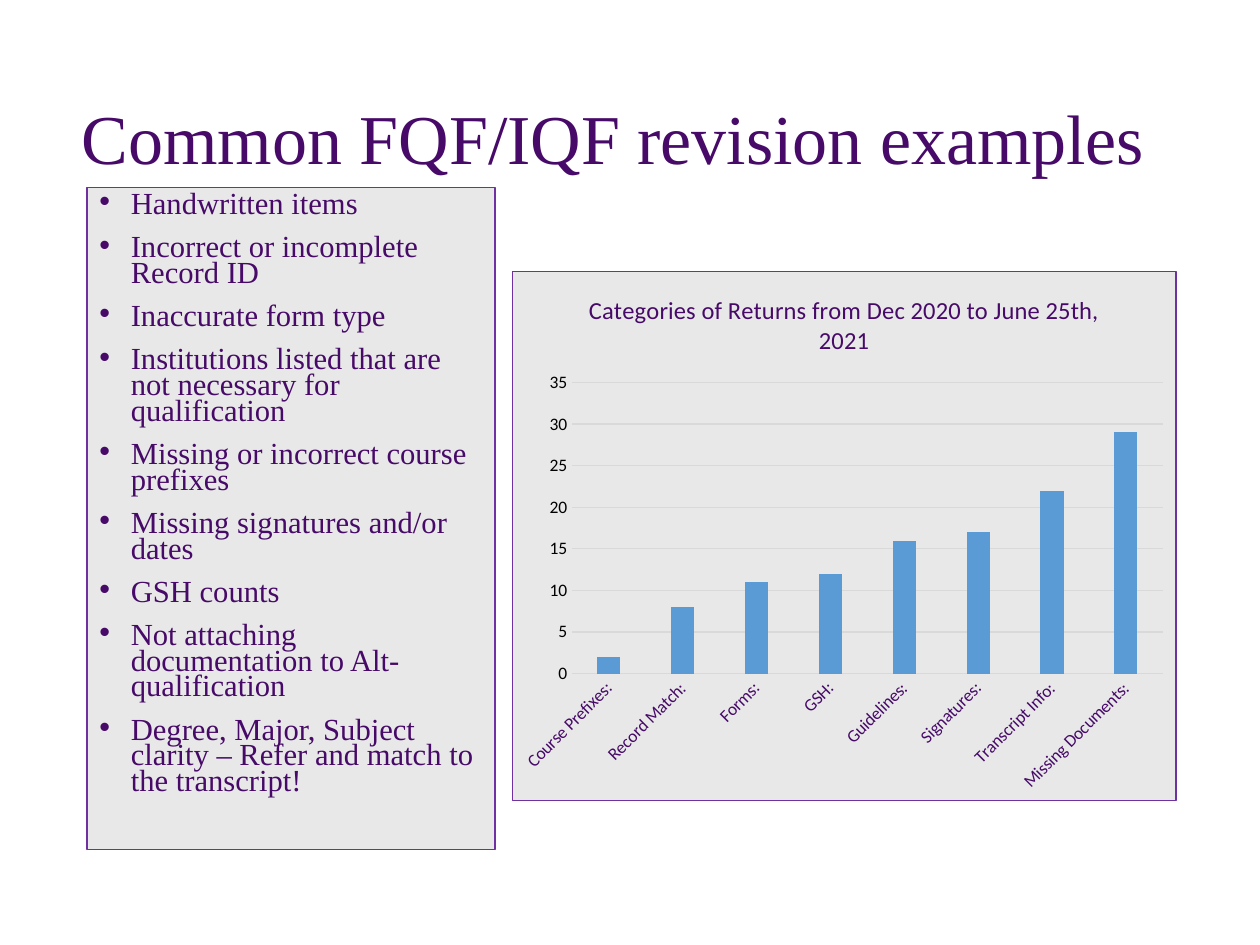
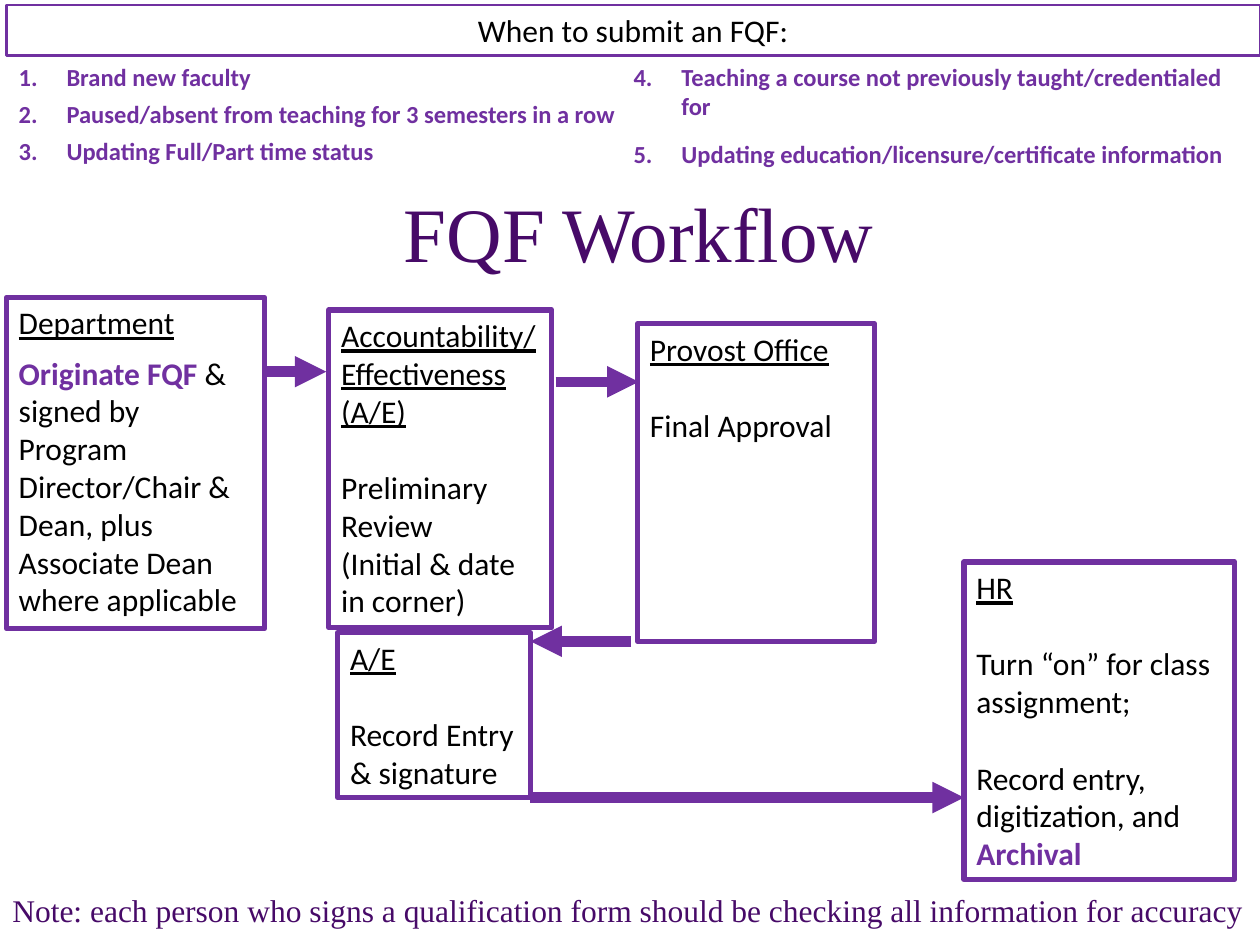
from typing import NamedTuple

from lxml import etree
from pptx import Presentation
from pptx import util as u
from pptx.chart.data import CategoryChartData
from pptx.dml.color import RGBColor
from pptx.enum import chart as charts
from pptx.enum import shapes, text
from pptx.oxml import parse_xml
from pptx.oxml.ns import nsdecls, qn

PLUM, PURPLE, BLACK = "470A68", "7030A0", "000000"
PANEL, GRID, BAR = "E8E8E8", "D9D9D9", "5B9BD5"
SERIF, SANS = "Times New Roman", "Calibri"
LEFT, CENTER = text.PP_ALIGN.LEFT, text.PP_ALIGN.CENTER
TITLE_HEIGHT = 1.45
BLANK_LINE = 22


class Area(NamedTuple):
    left: float
    top: float
    width: float
    height: float

    def lengths(self) -> list[u.Length]:
        return [u.Inches(value) for value in self]


class Style(NamedTuple):
    size: float
    color: str = BLACK
    face: str = SANS
    bold: bool = False
    underline: bool = False


class Line(NamedTuple):
    """One paragraph: its (words, style) spans and the points before it."""
    spans: list[tuple[str, Style]]
    before: float = 0


class Step(NamedTuple):
    area: Area
    heading: str
    lines: list[Line]


class Arrow(NamedTuple):
    start: float
    end: float
    y: float


PLAIN = Style(18)
HEADING = Style(18, underline=True)
STRONG = Style(18, PURPLE, bold=True)
REASON = Style(14, PURPLE, bold=True)
REVISION = Style(17.5, PLUM, SERIF)
NOTE = Style(18, PLUM, SERIF)

REVISIONS = [
    "Handwritten items",
    "Incorrect or incomplete Record ID",
    "Inaccurate form type",
    "Institutions listed that are not necessary for qualification",
    "Missing or incorrect course prefixes",
    "Missing signatures and/or dates",
    "GSH counts",
    "Not attaching documentation to Alt-qualification",
    "Degree, Major, Subject clarity – Refer and match to the transcript!",
]
RETURNS = {
    "Course Prefixes:": 2, "Record Match:": 8, "Forms:": 11, "GSH:": 12,
    "Guidelines:": 16, "Signatures:": 17, "Transcript Info:": 22,
    "Missing Documents:": 29,
}
STEPS = [
    Step(Area(0.05, 2.36, 2.05, 2.63), "Department", [
        Line([("Originate FQF ", STRONG),
              ("& signed by Program Director/Chair & Dean, plus "
               "Associate Dean where applicable", PLAIN)], 7)]),
    Step(Area(2.61, 2.46, 1.77, 2.52), "Accountability/Effectiveness (A/E)", [
        Line([("Preliminary Review", PLAIN)], BLANK_LINE),
        Line([("(Initial & date in corner)", PLAIN)])]),
    Step(Area(5.06, 2.57, 1.88, 2.52), "Provost Office", [
        Line([("Final Approval", PLAIN)], BLANK_LINE)]),
    Step(Area(7.65, 4.46, 2.15, 2.52), "HR", [
        Line([("Turn “on” for class assignment;", PLAIN)], BLANK_LINE),
        Line([("Record entry, digitization, and ", PLAIN),
              ("Archival", STRONG)], BLANK_LINE)]),
    Step(Area(2.68, 5.02, 1.53, 1.31), "A/E", [
        Line([("Record Entry & signature", PLAIN)], BLANK_LINE)]),
]
ARROWS = [Arrow(2.1, 2.59, 2.95), Arrow(4.41, 5.07, 3.03),
          Arrow(5.01, 4.21, 5.09), Arrow(4.21, 7.65, 6.33)]
REASONS = [
    ["Brand new faculty",
     "Paused/absent from teaching for 3 semesters in a row",
     "Updating Full/Part time status"],
    ["Teaching a course not previously taught/credentialed for",
     "Updating education/licensure/certificate information"],
]
REASON_GAPS = [4.5, 10.5]


def rgb(value: str) -> RGBColor:
    return RGBColor.from_string(value)


def style_font(font, style: Style) -> None:
    font.size = u.Pt(style.size)
    font.name = style.face
    font.bold = style.bold
    font.underline = style.underline
    font.color.rgb = rgb(style.color)


def write(frame, lines: list[Line], align=LEFT, spacing: float = 1.0) -> None:
    frame.word_wrap = True
    for index, line in enumerate(lines):
        para = frame.add_paragraph() if index else frame.paragraphs[0]
        para.alignment = align
        para.line_spacing = spacing
        para.space_before = u.Pt(line.before)
        for words, style in line.spans:
            span = para.add_run()
            span.text = words
            style_font(span.font, style)


def list_lines(items: list[str], style: Style, gap: float) -> list[Line]:
    return [Line([(item, style)], gap if index else 0)
            for index, item in enumerate(items)]


def add_marks(frame, indent: float, tag: str, **settings: str) -> None:
    """Give every paragraph a hanging bullet or number."""
    for para in frame.paragraphs:
        properties = para._p.get_or_add_pPr()
        properties.set("marL", str(u.Inches(indent)))
        properties.set("indent", str(-u.Inches(indent)))
        if tag == "a:buChar":
            etree.SubElement(properties, qn("a:buFont"), typeface="Arial")
        etree.SubElement(properties, qn(tag), **settings)


def add_title(page, words: str, area: Area, size: float, align=LEFT) -> None:
    title = page.shapes.title
    title.left, title.top, title.width, title.height = area.lengths()
    title.text_frame.vertical_anchor = text.MSO_ANCHOR.MIDDLE
    title.text_frame.auto_size = text.MSO_AUTO_SIZE.NONE
    write(title.text_frame, [Line([(words, Style(size, PLUM, SERIF))])], align, 0.9)


def add_box(page, area: Area, line_width: float, fill: str = ""):
    box = page.shapes.add_shape(shapes.MSO_SHAPE.RECTANGLE, *area.lengths())
    box.shadow.inherit = False
    if fill:
        box.fill.solid()
        box.fill.fore_color.rgb = rgb(fill)
    else:
        box.fill.background()
    box.line.color.rgb = rgb(PURPLE)
    box.line.width = u.Pt(line_width)
    box.text_frame.vertical_anchor = text.MSO_ANCHOR.TOP
    return box


def add_arrow(page, arrow: Arrow) -> None:
    connector = page.shapes.add_connector(
        shapes.MSO_CONNECTOR.STRAIGHT, u.Inches(arrow.start), u.Inches(arrow.y),
        u.Inches(arrow.end), u.Inches(arrow.y))
    connector.line.color.rgb = rgb(PURPLE)
    connector.line.width = u.Pt(6)
    etree.SubElement(connector.line._get_or_add_ln(), qn("a:tailEnd"), type="triangle")
    etree.SubElement(connector._element.spPr, qn("a:effectLst"))


def frame_chart(chart) -> None:
    """Fill and outline the chart area, and fix the inner plot area."""
    chart.element.find(qn("c:chart")).addnext(parse_xml(
        f'<c:spPr {nsdecls("c", "a")}>'
        f'<a:solidFill><a:srgbClr val="{PANEL}"/></a:solidFill>'
        f'<a:ln w="{u.Pt(0.75)}"><a:solidFill><a:srgbClr val="{PURPLE}"/>'
        '</a:solidFill></a:ln></c:spPr>'))
    plot_area = chart.element.find(".//" + qn("c:plotArea"))
    for old in plot_area.findall(qn("c:layout")):
        plot_area.remove(old)
    settings = {"layoutTarget": "inner", "xMode": "edge", "yMode": "edge",
                "x": 0.09, "y": 0.21, "w": 0.89, "h": 0.55}
    layout = etree.Element(qn("c:layout"))
    manual = etree.SubElement(layout, qn("c:manualLayout"))
    for name, value in settings.items():
        etree.SubElement(manual, qn("c:" + name), val=str(value))
    plot_area.insert(0, layout)


def add_returns_chart(page, area: Area) -> None:
    data = CategoryChartData()
    data.categories = list(RETURNS)
    data.add_series("Series 1", list(RETURNS.values()))
    chart = page.shapes.add_chart(
        charts.XL_CHART_TYPE.COLUMN_CLUSTERED, *area.lengths(), data).chart
    frame_chart(chart)
    style_font(chart.font, Style(10))
    chart.has_legend = False
    chart.has_title = True
    write(chart.chart_title.text_frame, [Line([(
        "Categories of Returns from Dec 2020 to June 25th, 2021",
        Style(14, PLUM))])], CENTER)

    plot = chart.plots[0]
    plot.vary_by_categories = False
    plot.gap_width, plot.overlap = 219, -27
    bars = plot.series[0].format.fill
    bars.solid()
    bars.fore_color.rgb = rgb(BAR)

    categories, values = chart.category_axis, chart.value_axis
    for axis, color in ((categories, PLUM), (values, BLACK)):
        axis.major_tick_mark = axis.minor_tick_mark = charts.XL_TICK_MARK.NONE
        style_font(axis.tick_labels.font, Style(10, color))
    labels = categories.format.line
    values.format.line.fill.background()
    values.minimum_scale, values.maximum_scale, values.major_unit = 0, 35, 5
    for line in (labels, values.major_gridlines.format.line):
        line.color.rgb = rgb(GRID)
        line.width = u.Pt(0.75)
    body = categories._element.find(qn("c:txPr")).find(qn("a:bodyPr"))
    body.set("rot", str(-45 * 60000))
    body.set("vert", "horz")


def build_revisions(page) -> None:
    add_title(page, "Common FQF/IQF revision examples",
              Area(0.55, 0.4, 9, TITLE_HEIGHT), 40)
    frame = add_box(page, Area(0.69, 1.49, 3.24, 5.25), 0.75, PANEL).text_frame
    write(frame, list_lines(REVISIONS, REVISION, 10), spacing=0.7)
    add_marks(frame, 0.25, "a:buChar", char="•")
    for para in frame.paragraphs:
        style_font(para.font, REVISION)
    add_returns_chart(page, Area(4.06, 2.15, 5.28, 4.21))


def build_workflow(page) -> None:
    add_title(page, "FQF Workflow", Area(0.76, 1.16, 8.62, TITLE_HEIGHT), 44, CENTER)
    for step in STEPS:
        box = add_box(page, step.area, 3)
        write(box.text_frame, [Line([(step.heading, HEADING)]), *step.lines])
    for arrow in ARROWS:
        add_arrow(page, arrow)

    note = page.shapes.add_textbox(*Area(0, 7.02, 10, 0.4).lengths()).text_frame
    note.margin_right = 0
    write(note, [Line([(
        "Note: each person who signs a qualification form should be "
        "checking all information for accuracy", NOTE)])])

    banner = add_box(page, Area(0.05, 0.04, 9.95, 0.4), 1.5)
    write(banner.text_frame, [Line([("When to submit an FQF:", PLAIN)])], CENTER)

    first_number = 1
    for column, (reasons, gap) in enumerate(zip(REASONS, REASON_GAPS)):
        area = Area(0.05 + column * 4.88, 0.44, 5.07, 1.13)
        frame = page.shapes.add_textbox(*area.lengths()).text_frame
        write(frame, list_lines(reasons, REASON, gap))
        add_marks(frame, 0.38, "a:buAutoNum", type="arabicPeriod",
                  startAt=str(first_number))
        for para in frame.paragraphs:
            style_font(para.font, REASON)
        first_number += len(reasons)


def main() -> None:
    deck = Presentation()
    deck.slide_width, deck.slide_height = u.Inches(10), u.Inches(7.5)
    title_only = deck.slide_layouts[5]
    for build in (build_revisions, build_workflow):
        build(deck.slides.add_slide(title_only))
    deck.save("out.pptx")


if __name__ == "__main__":
    main()
